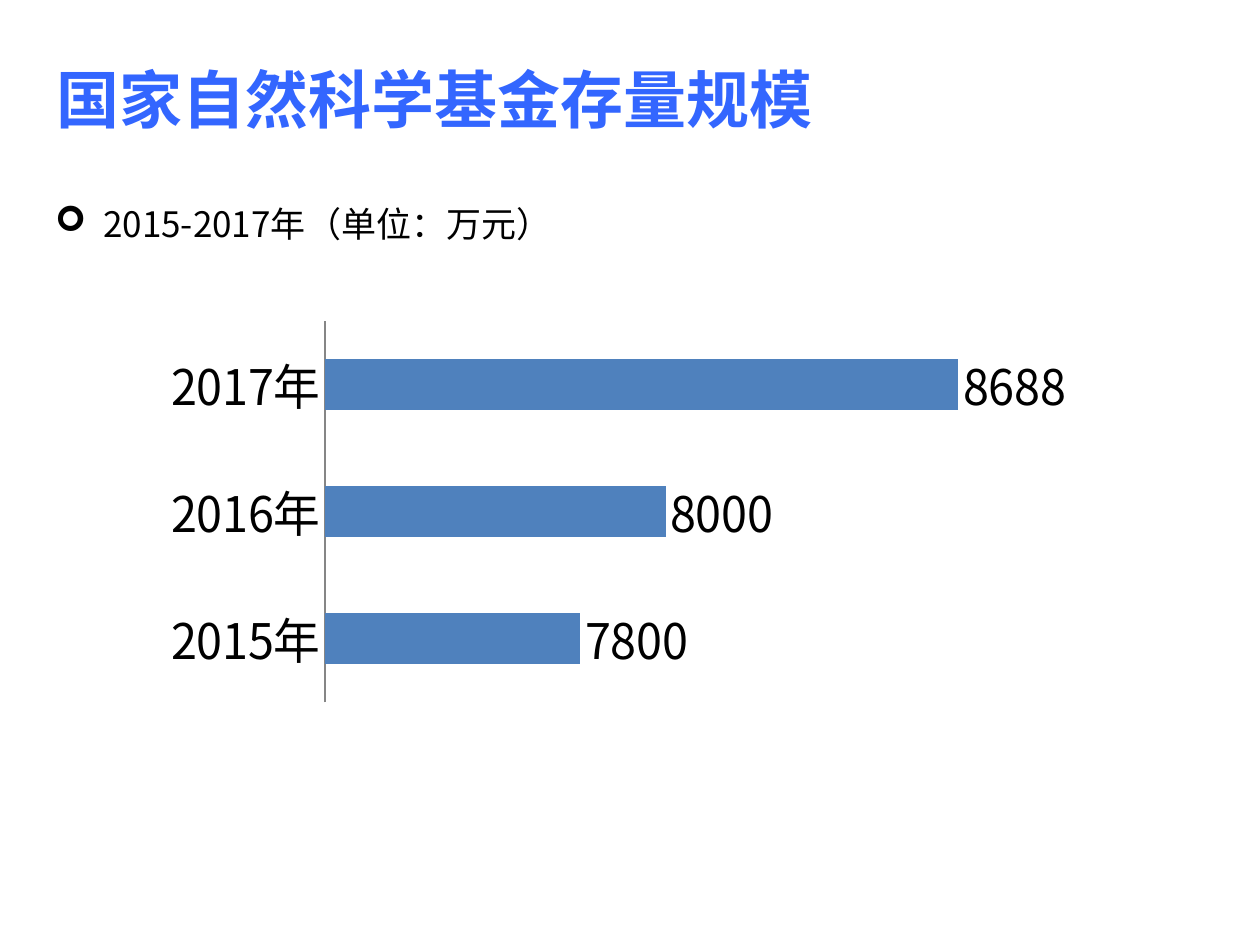
"""Build a slide with a bar chart of natural science fund stock, 2015-2017."""
import pptx
import pptx.chart.data
import pptx.dml.color
import pptx.enum.chart
import pptx.enum.text
import pptx.oxml
import pptx.oxml.ns
import pptx.util
from pptx.util import Cm, Pt

FACE = "Noto Sans CJK SC"
BLUE = pptx.dml.color.RGBColor(0x33, 0x66, 0xFF)
STEEL = pptx.dml.color.RGBColor(0x4F, 0x81, 0xBD)
BLACK = pptx.dml.color.RGBColor(0, 0, 0)
GRAY = pptx.dml.color.RGBColor(0x86, 0x86, 0x86)
NS = pptx.oxml.ns.nsdecls("a")


def style(font, size, color, bold=False):
    font.size = Pt(size)
    font.bold = bold
    font.color.rgb = color
    font.name = FACE
    latin = font._element.find(pptx.oxml.ns.qn("a:latin"))
    latin.addnext(pptx.oxml.parse_xml(f'<a:ea {NS} typeface="{FACE}"/>'))


def write(shape, text, space):
    frame = shape.text_frame
    frame.word_wrap = True
    frame.auto_size = pptx.enum.text.MSO_AUTO_SIZE.NONE
    frame.vertical_anchor = pptx.enum.text.MSO_ANCHOR.TOP
    para = frame.paragraphs[0]
    para.text = text
    para.alignment = pptx.enum.text.PP_ALIGN.LEFT
    para.line_spacing = space
    return para


deck = pptx.Presentation()
deck.slide_width = Cm(25.4)
deck.slide_height = Cm(19.05)
slide = deck.slides.add_slide(deck.slide_layouts[5])

title = slide.shapes.title
title.left, title.top, title.width, title.height = Cm(0.89), Cm(0.71), Cm(16.41), Cm(2.18)
head = write(title, "国家自然科学基金存量规模", 1.25)
style(head.font, 36, BLUE, True)

body = slide.shapes.add_textbox(Cm(0.86), Cm(3.53), Cm(24.2), Cm(12.6))
note = write(body, "2015-2017年（单位：万元）", 1.5)
props = note._p.get_or_add_pPr()
props.set("marL", str(Cm(0.97)))
props.set("indent", str(-Cm(0.97)))
props.append(pptx.oxml.parse_xml(f'<a:buFont {NS} typeface="Wingdings"/>'))
props.append(pptx.oxml.parse_xml(f'<a:buChar {NS} char="➢"/>'))
style(note.font, 20, BLACK)

data = pptx.chart.data.CategoryChartData()
data.categories = ["2015年", "2016年", "2017年"]
data.add_series("Series 1", [7800, 8000, 8688])
chart = slide.shapes.add_chart(
    pptx.enum.chart.XL_CHART_TYPE.BAR_CLUSTERED,
    Cm(3.1), Cm(6.32), Cm(18.39), Cm(8), data).chart
chart.has_title = False
chart.has_legend = False
style(chart.font, 28, BLACK)

years = chart.category_axis
years.major_tick_mark = pptx.enum.chart.XL_TICK_MARK.NONE
years.format.line.color.rgb = GRAY
years.format.line.width = Pt(0.75)
funds = chart.value_axis
funds.minimum_scale = 7200
funds.maximum_scale = 8800
funds.has_major_gridlines = False
funds.visible = False

plot = chart.plots[0]
plot.gap_width = 150
plot.overlap = -25
plot.vary_by_categories = False
fill = plot.series[0].format.fill
fill.solid()
fill.fore_color.rgb = STEEL
plot.has_data_labels = True
plot.data_labels.show_value = True
plot.data_labels.position = pptx.enum.chart.XL_LABEL_POSITION.OUTSIDE_END

deck.save("out.pptx")
